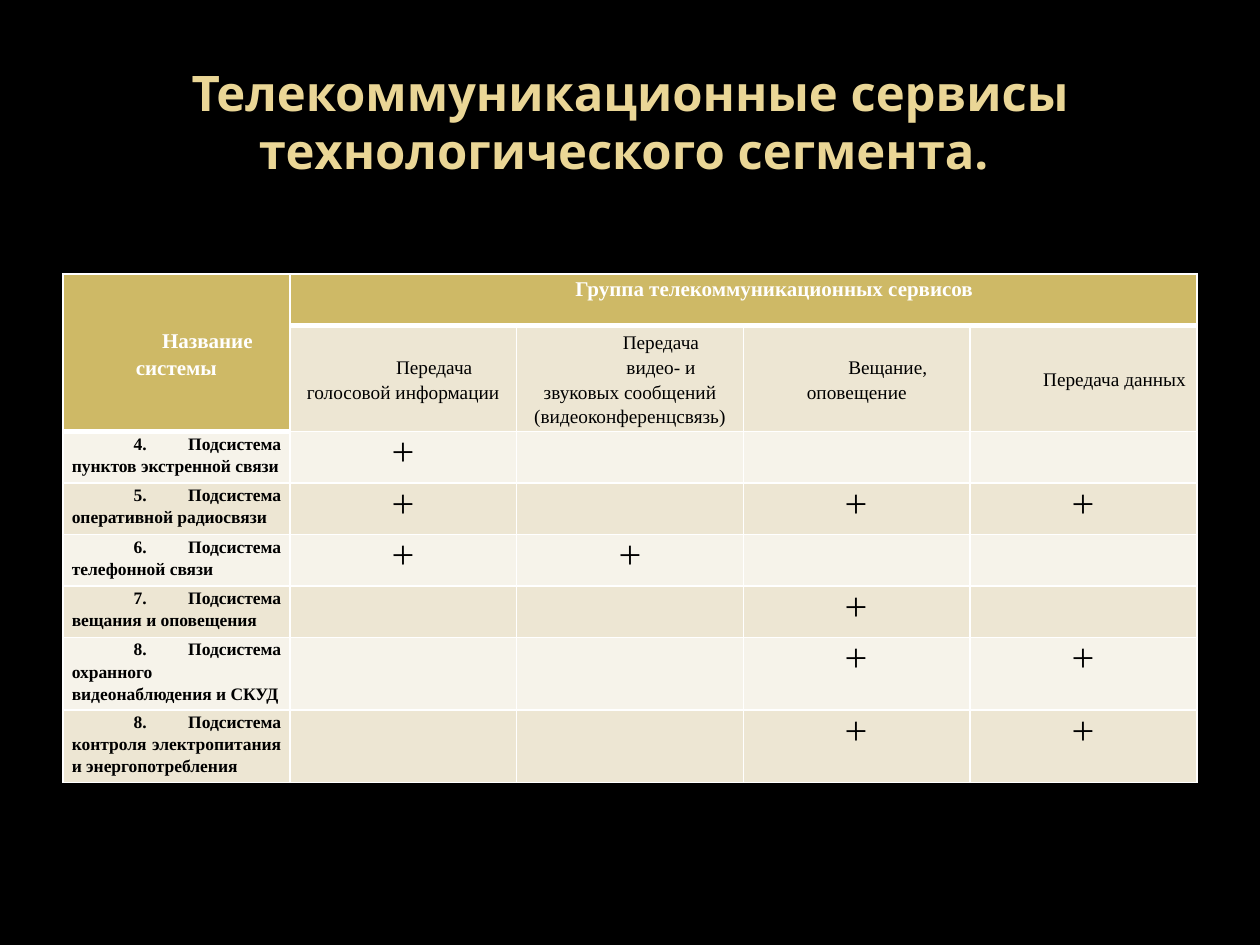
from lxml import etree
from pptx import Presentation
from pptx.dml.color import RGBColor
from pptx.enum.text import MSO_ANCHOR, PP_ALIGN
from pptx.oxml.ns import qn
from pptx.util import Pt

CENTER, JUSTIFY = PP_ALIGN.CENTER, PP_ALIGN.JUSTIFY
TOP, MIDDLE = MSO_ANCHOR.TOP, MSO_ANCHOR.MIDDLE

WHITE, BLACK = "FFFFFF", "000000"
GOLD, CREAM, IVORY = "CEB966", "EDE6D3", "F6F3EA"
SERIF, SYMBOL = "Times New Roman", "TeX Gyre Pagella"

COLUMN_WIDTH, ROW_HEIGHT = 129.6, 29.4
SERVICES = [
    "Передача голосовой информации",
    "Передача\nвидео- и звуковых сообщений (видеоконференцсвязь)",
    "Вещание, оповещение",
    "Передача данных",
]
SYSTEMS = [
    ("4. Подсистема пунктов экстренной связи", {1}),
    ("5. Подсистема оперативной радиосвязи", {1, 3, 4}),
    ("6. Подсистема телефонной связи", {1, 2}),
    ("7. Подсистема вещания и оповещения", {3}),
    ("8. Подсистема охранного видеонаблюдения и СКУД", {3, 4}),
    ("8. Подсистема контроля электропитания и энергопотребления", {3, 4}),
]


def color(value):
    return RGBColor.from_string(value)


class SlideBuilder:
    def __init__(self, slide):
        self.slide = slide
        slide.background.fill.solid()
        slide.background.fill.fore_color.rgb = color(BLACK)

    def format_text(self, frame, font, size, ink, bold, align):
        for para in frame.paragraphs:
            para.alignment = align
            for span in para.runs:
                span.font.name = font
                span.font.size = Pt(size)
                span.font.bold = bold
                span.font.color.rgb = color(ink)

    def title(self, text, left, top, width, height):
        box = self.slide.shapes.add_textbox(Pt(left), Pt(top), Pt(width), Pt(height))
        frame = box.text_frame
        frame.word_wrap = True
        frame.vertical_anchor = MIDDLE
        frame.text = text
        self.format_text(frame, "Noto Sans", 28, "EAD696", True, CENTER)

    def table(self, rows, columns, left, top):
        frame = self.slide.shapes.add_table(
            rows, columns, Pt(left), Pt(top),
            Pt(columns * COLUMN_WIDTH), Pt(rows * ROW_HEIGHT))
        table = frame.table
        table.first_row = table.horz_banding = False
        for column in table.columns:
            column.width = Pt(COLUMN_WIDTH)
        for row in table.rows:
            row.height = Pt(ROW_HEIGHT)
        return table

    def cell(self, cell, fill, bottom=1):
        properties = cell._tc.get_or_add_tcPr()
        for side, width in (("L", 1), ("R", 1), ("T", 1), ("B", bottom)):
            line = etree.SubElement(properties, qn(f"a:ln{side}"), w=str(Pt(width)))
            solid = etree.SubElement(line, qn("a:solidFill"))
            etree.SubElement(solid, qn("a:srgbClr"), val=WHITE)
        cell.fill.solid()
        cell.fill.fore_color.rgb = color(fill)

    def label(self, cell, text, size, ink=BLACK, bold=True, align=CENTER, anchor=MIDDLE):
        cell.margin_left = cell.margin_right = Pt(5.04)
        cell.margin_top = cell.margin_bottom = 0
        cell.vertical_anchor = anchor
        cell.text_frame.text = text
        self.format_text(cell.text_frame, SERIF, size, ink, bold, align)
        for para in cell.text_frame.paragraphs:
            para.line_spacing = 1.15
            properties = para._p.get_or_add_pPr()
            properties.set("marL", "0")
            properties.set("indent", str(Pt(35.4)))

    def mark(self, cell):
        cell.text_frame.text = "+"
        self.format_text(cell.text_frame, SYMBOL, 18, BLACK, False, CENTER)


def main():
    deck = Presentation()
    deck.slide_width, deck.slide_height = Pt(720), Pt(540)
    page = SlideBuilder(deck.slides.add_slide(deck.slide_layouts[6]))
    page.title("Телекоммуникационные сервисы технологического сегмента. ",
               36, 21.6, 648, 95)

    columns = len(SERVICES) + 1
    table = page.table(len(SYSTEMS) + 2, columns, 36, 156.6)
    for column in range(columns):
        page.cell(table.cell(0, column), GOLD, 3)
        page.cell(table.cell(1, column), CREAM if column else GOLD, 1 if column else 3)
    table.cell(0, 0).merge(table.cell(1, 0))
    table.cell(0, 1).merge(table.cell(0, columns - 1))
    page.label(table.cell(0, 0), "Название системы", 12, WHITE)
    page.label(table.cell(0, 1), "Группа телекоммуникационных сервисов", 12, WHITE,
               anchor=TOP)
    for column, service in enumerate(SERVICES, 1):
        page.label(table.cell(1, column), service, 11, bold=False)

    for row, (system, marked) in enumerate(SYSTEMS, 2):
        for column in range(columns):
            cell = table.cell(row, column)
            page.cell(cell, CREAM if row % 2 else IVORY)
            if column in marked:
                page.mark(cell)
        page.label(table.cell(row, 0), system, 10, align=JUSTIFY, anchor=TOP)

    deck.save("out.pptx")


if __name__ == "__main__":
    main()
